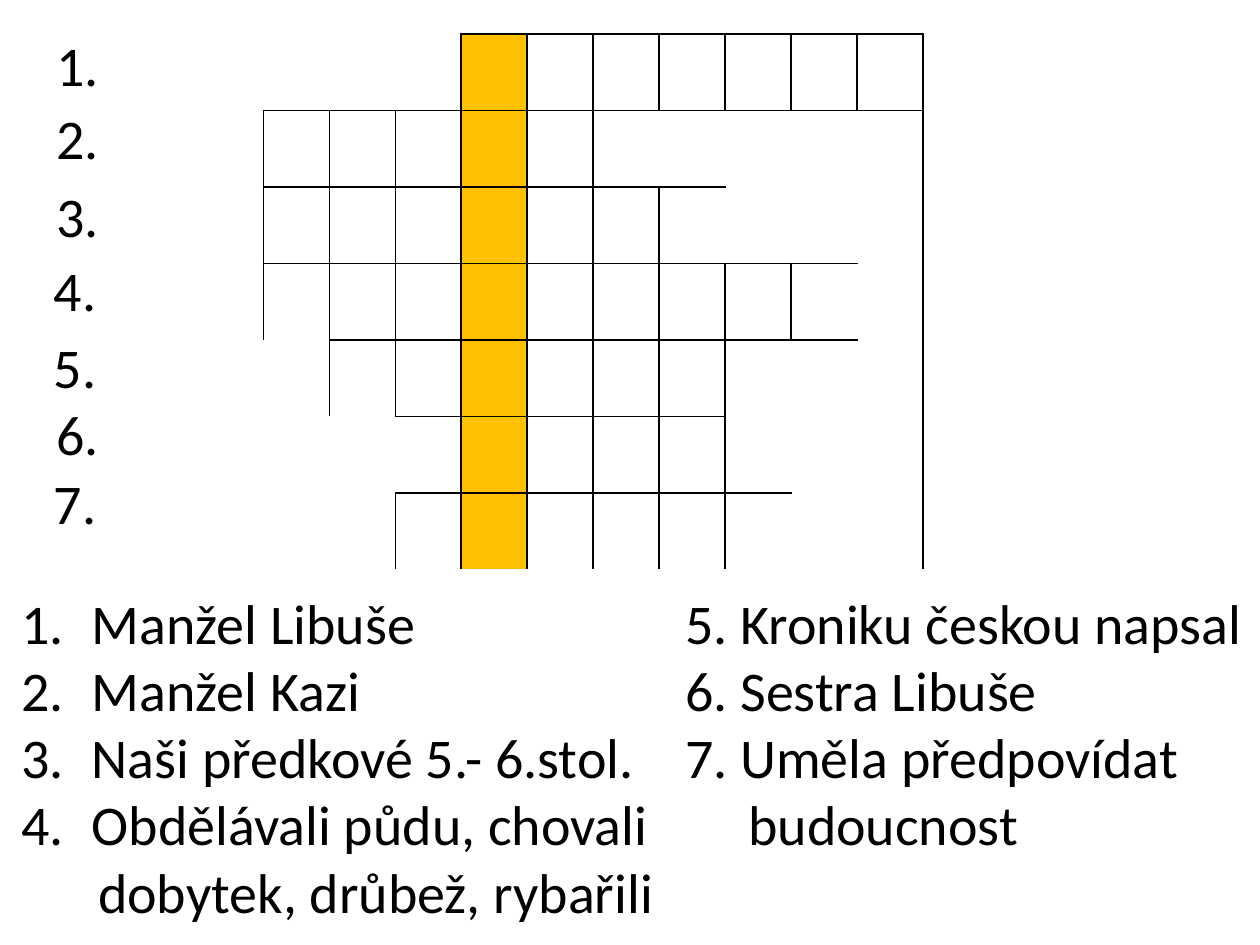
from pptx import Presentation
from pptx.dml.color import RGBColor as RGB
from pptx.enum.text import MSO_AUTO_SIZE as Fit
from pptx.oxml.ns import qn
from pptx.util import Inches, Pt
from lxml.etree import SubElement

COLORS = {"ink": "000000", "solution": "FFC000"}
FONT = {"name": "Calibri", "size": Pt(32)}

deck = Presentation()
deck.slide_width, deck.slide_height = Inches(10), Inches(7.5)
slide = deck.slides.add_slide(deck.slide_layouts[6])

# Crossword grid: a wide label column, eleven letter columns, a tall last row
WIDTH, HEIGHT, LABELS, FOOT = 7.85, 7.73, 2.09, 3.48
LETTERS, ANSWERS, SOLUTION = 11, 7, 4
crossword = slide.shapes.add_table(ANSWERS + 1, LETTERS + 1, 0, Inches(0.27),
                                   Inches(WIDTH), Inches(HEIGHT)).table
crossword.first_row = crossword.horz_banding = False
for c, column in enumerate(crossword.columns):
    column.width = Inches((WIDTH - LABELS) / LETTERS if c else LABELS)
for r, row in enumerate(crossword.rows):
    row.height = Inches((HEIGHT - FOOT) / ANSWERS if r < ANSWERS else FOOT)

# Blank areas: row, column, rows, columns, ruled sides
BLANKS = [
    (0, 0, 1, 4, "R"), (0, 11, 7, 1, "L"), (1, 0, 1, 1, "R"),
    (1, 6, 1, 2, "LTB"), (1, 8, 2, 2, "TB"), (1, 10, 6, 1, "T"),
    (2, 0, 2, 1, "R"), (4, 0, 1, 2, "R"), (4, 8, 2, 1, "LTB"),
    (4, 9, 3, 1, "T"), (5, 0, 2, 3, ""), (5, 3, 1, 1, "TRB"),
    (7, 0, 1, 12, "B"),
]
ruled = {}
for top, left, tall, wide, sides in BLANKS:
    for r in range(top, top + tall):
        for c in range(left, left + wide):
            ruled[r, c] = ""
    ruled[top, left] = sides
    if tall * wide > 1:
        crossword.cell(top, left).merge(
            crossword.cell(top + tall - 1, left + wide - 1))

# Cell borders and the highlighted solution column
for r in range(ANSWERS + 1):
    for c in range(LETTERS + 1):
        cell = crossword.cell(r, c)
        properties = cell._tc.get_or_add_tcPr()
        for side in "LRTB":
            border = SubElement(properties, qn(f"a:ln{side}"), w=str(Pt(1)))
            if side in ruled.get((r, c), "LRTB"):
                paint = SubElement(border, qn("a:solidFill"))
                SubElement(paint, qn("a:srgbClr"), val=COLORS["ink"])
            else:
                SubElement(border, qn("a:noFill"))
        if c == SOLUTION and r < ANSWERS:
            cell.fill.solid()
            cell.fill.fore_color.rgb = RGB.from_string(COLORS["solution"])
        else:
            cell.fill.background()


def add_lines(left, top, width, height, lines, numbered=0, last_indent=0):
    """Unwrapped text box; the first lines may be numbered, the last indented."""
    box = slide.shapes.add_textbox(*map(Inches, (left, top, width, height)))
    frame = box.text_frame
    frame.word_wrap, frame.auto_size = False, Fit.SHAPE_TO_FIT_TEXT
    for i, line in enumerate(lines):
        paragraph = frame.paragraphs[0] if i == 0 else frame.add_paragraph()
        layout = paragraph._p.get_or_add_pPr()
        if i < numbered:
            layout.set("marL", str(Inches(0.56)))
            layout.set("indent", str(-Inches(0.56)))
            SubElement(layout, qn("a:buFont"), typeface="+mj-lt")
            SubElement(layout, qn("a:buAutoNum"), type="arabicPeriod")
        elif last_indent and i == len(lines) - 1:
            layout.set("marL", str(Inches(last_indent)))
        run = paragraph.add_run()
        run.text = line
        for key, value in FONT.items():
            setattr(run.font, key, value)
        run.font.color.rgb = RGB.from_string(COLORS["ink"])


# Clues in two columns
add_lines(0.07, 4.62, 5.24, 2.79,
          ["Manžel Libuše", "Manžel Kazi", "Naši předkové 5.- 6.stol.",
           "Obdělávali půdu, chovali", "dobytek, drůbež, rybařili"],
          numbered=4, last_indent=0.61)
add_lines(5.34, 4.62, 4.66, 2.26,
          ["5. Kroniku českou napsal", "6. Sestra Libuše",
           "7. Uměla předpovídat", "budoucnost"], last_indent=0.5)

# Row numbers beside the crossword
ROW_NUMBERS = [(0.35, 0.19), (0.35, 0.77), (0.35, 1.39), (0.33, 1.98),
               (0.33, 2.59), (0.35, 3.12), (0.33, 3.67)]
for number, (left, top) in enumerate(ROW_NUMBERS, 1):
    add_lines(left, top, 0.54, 0.64, [f"{number}."])

deck.save("out.pptx")
